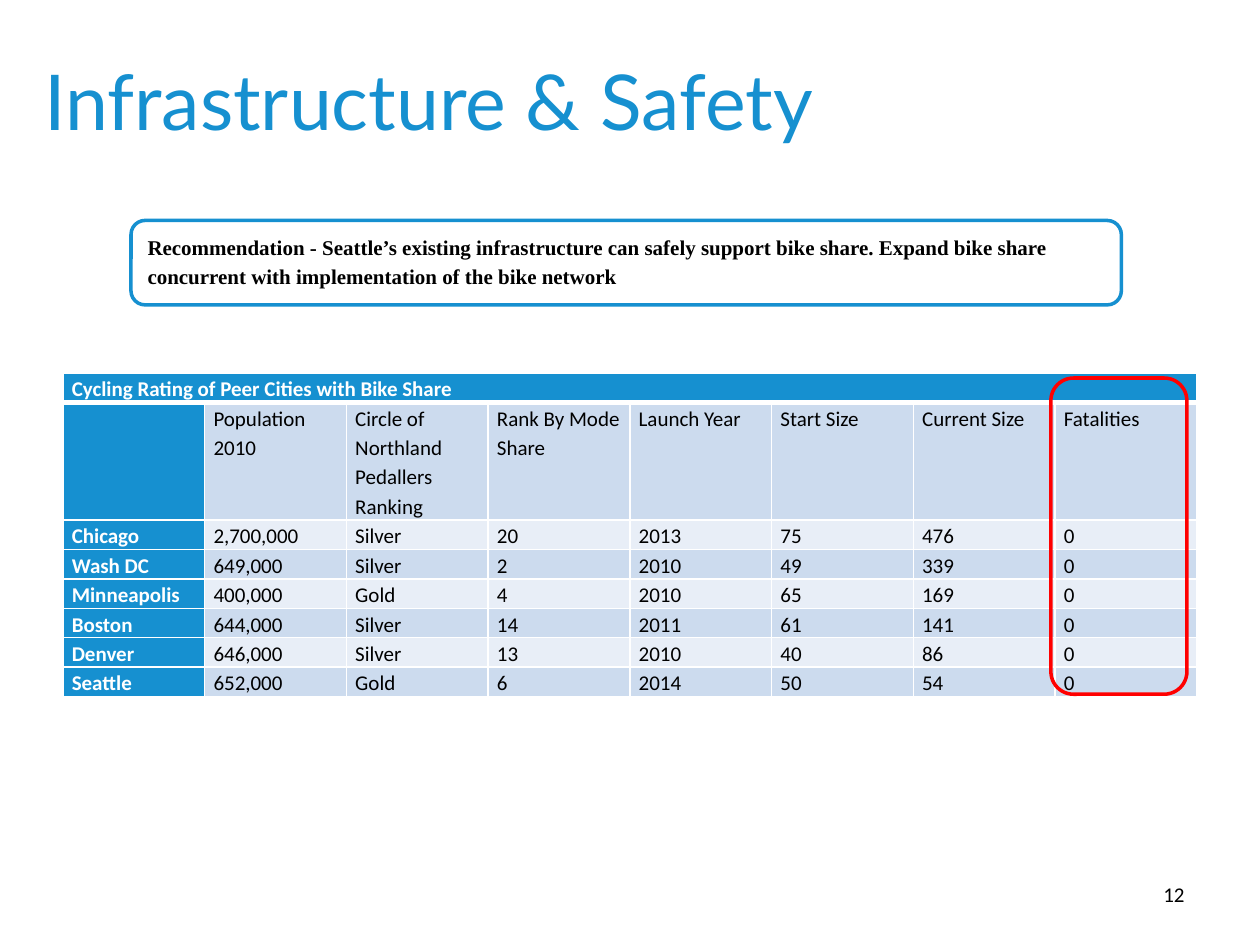
from dataclasses import dataclass

from lxml import etree
from pptx import Presentation
from pptx.dml.color import RGBColor
from pptx.enum.shapes import MSO_SHAPE
from pptx.enum.text import MSO_ANCHOR, PP_ALIGN
from pptx.oxml.ns import qn
from pptx.util import Inches, Pt

ROUNDED = MSO_SHAPE.ROUNDED_RECTANGLE
MIDDLE, TOP = MSO_ANCHOR.MIDDLE, MSO_ANCHOR.TOP
LEFT, RIGHT = PP_ALIGN.LEFT, PP_ALIGN.RIGHT
TITLE_ONLY = 5


@dataclass(frozen=True)
class Theme:
    blue: str = "1690D0"
    band_dark: str = "CCDBEE"
    band_light: str = "E8EEF7"
    red: str = "FF0000"
    black: str = "000000"
    white: str = "FFFFFF"
    title_font: str = "Lato"
    body_font: str = "Calibri"
    callout_font: str = "Times New Roman"
    title_size: int = 44
    body_size: int = 12
    line_spacing: float = 1.15
    outline: int = 2
    grid: int = 1
    heading_rule: int = 3


THEME = Theme()

TABLE_TITLE = "Cycling Rating of Peer Cities with Bike Share"
ROWS = [
    ["", "Population 2010", "Circle of Northland Pedallers Ranking", "Rank By Mode Share",
     "Launch Year", "Start Size", "Current Size", "Fatalities"],
    ["Chicago", "2,700,000", "Silver", "20", "2013", "75", "476", "0"],
    ["Wash DC", "649,000", "Silver", "2", "2010", "49", "339", "0"],
    ["Minneapolis", "400,000", "Gold", "4", "2010", "65", "169", "0"],
    ["Boston", "644,000", "Silver", "14", "2011", "61", "141", "0"],
    ["Denver", "646,000", "Silver", "13", "2010", "40", "86", "0"],
    ["Seattle", "652,000", "Gold", "6", "2014", "50", "54", "0"],
]
RECOMMENDATION = [
    "Recommendation - Seattle’s existing infrastructure can safely support bike share. "
    "Expand bike share",
    "concurrent with implementation of the bike network",
]


def inches(*lengths):
    return [Inches(length) for length in lengths]


def style_para(para, font, size, color, bold=False, align=LEFT, spacing=None):
    para.font.name = font
    para.font.size = Pt(size)
    para.font.bold = bold
    para.font.color.rgb = RGBColor.from_string(color)
    para.alignment = align
    if spacing:
        para.line_spacing = spacing


def add_title(page, box, text):
    title = page.shapes.title
    title.left, title.top, title.width, title.height = inches(*box)
    title.text_frame.text = text
    title.text_frame.vertical_anchor = MIDDLE
    style_para(title.text_frame.paragraphs[0], THEME.title_font, THEME.title_size, THEME.blue)


def add_page_number(page, box, text):
    frame = page.shapes.add_textbox(*inches(*box)).text_frame
    frame.word_wrap = True
    frame.vertical_anchor = TOP
    frame.text = text
    style_para(frame.paragraphs[0], THEME.body_font, THEME.body_size, THEME.black, align=RIGHT)


def add_outline(page, box, color, fill=None):
    outline = page.shapes.add_shape(ROUNDED, *inches(*box))
    outline.shadow.inherit = False
    outline.line.color.rgb = RGBColor.from_string(color)
    outline.line.width = Pt(THEME.outline)
    if fill:
        outline.fill.solid()
        outline.fill.fore_color.rgb = RGBColor.from_string(fill)
    else:
        outline.fill.background()
    return outline


def add_callout(page, box, lines):
    frame = add_outline(page, box, THEME.blue, THEME.white).text_frame
    frame.word_wrap = True
    frame.vertical_anchor = TOP
    frame.text = "\n".join(lines)
    for para in frame.paragraphs:
        style_para(para, THEME.callout_font, THEME.body_size, THEME.black, bold=True,
                   spacing=THEME.line_spacing)


def set_borders(cell, bottom):
    """Draw the white grid lines; they come before the fill in the cell's XML."""
    properties = cell._tc.get_or_add_tcPr()
    widths = {"a:lnL": THEME.grid, "a:lnR": THEME.grid, "a:lnT": THEME.grid, "a:lnB": bottom}
    for index, (tag, width) in enumerate(widths.items()):
        line = etree.Element(qn(tag), w=str(Pt(width)))
        fill = etree.SubElement(line, qn("a:solidFill"))
        etree.SubElement(fill, qn("a:srgbClr"), val=THEME.white)
        properties.insert(index, line)


def fill_cell(cell, text, fill, heading, bottom):
    cell.margin_left = cell.margin_right = Inches(0.07)
    cell.margin_top = cell.margin_bottom = 0
    cell.fill.solid()
    cell.fill.fore_color.rgb = RGBColor.from_string(fill)
    set_borders(cell, bottom)
    cell.text = text
    style_para(cell.text_frame.paragraphs[0], THEME.body_font, THEME.body_size,
               THEME.white if heading else THEME.black, bold=heading,
               spacing=THEME.line_spacing)


def add_city_table(page, box, title, rows):
    columns = len(rows[0])
    frame = page.shapes.add_table(len(rows) + 1, columns, *inches(*box))
    table = frame.table
    for column in table.columns:
        column.width = Inches(box[2] / columns)

    # The column labels take four lines, every other row takes one
    line_height = box[3] / (len(rows) + 4)
    for index, row in enumerate(table.rows):
        row.height = Inches(line_height * (4 if index == 1 else 1))

    grid = [[title] + [""] * (columns - 1)] + rows
    for row_index, texts in enumerate(grid):
        band = THEME.band_dark if row_index % 2 else THEME.band_light
        for column_index, text in enumerate(texts):
            heading = row_index == 0 or column_index == 0
            fill_cell(table.cell(row_index, column_index), text,
                      THEME.blue if heading else band, heading,
                      THEME.heading_rule if row_index == 0 else THEME.grid)
    table.cell(0, 0).merge(table.cell(0, columns - 1))


def main():
    deck = Presentation()
    deck.slide_width, deck.slide_height = inches(10, 7.5)
    page = deck.slides.add_slide(deck.slide_layouts[TITLE_ONLY])

    # Heading and page number
    add_title(page, (0.25, 0.17, 9, 1.25), "Infrastructure & Safety")
    add_page_number(page, (7.17, 6.95, 2.33, 0.4), "12")

    # Peer cities, with the fatalities column ringed
    add_city_table(page, (0.5, 2.96, 9, 2.57), TABLE_TITLE, ROWS)
    add_outline(page, (8.34, 3, 1.08, 2.51), THEME.red)

    # Recommendation
    add_callout(page, (1.04, 1.75, 7.86, 0.67), RECOMMENDATION)

    deck.save("out.pptx")


if __name__ == "__main__":
    main()
